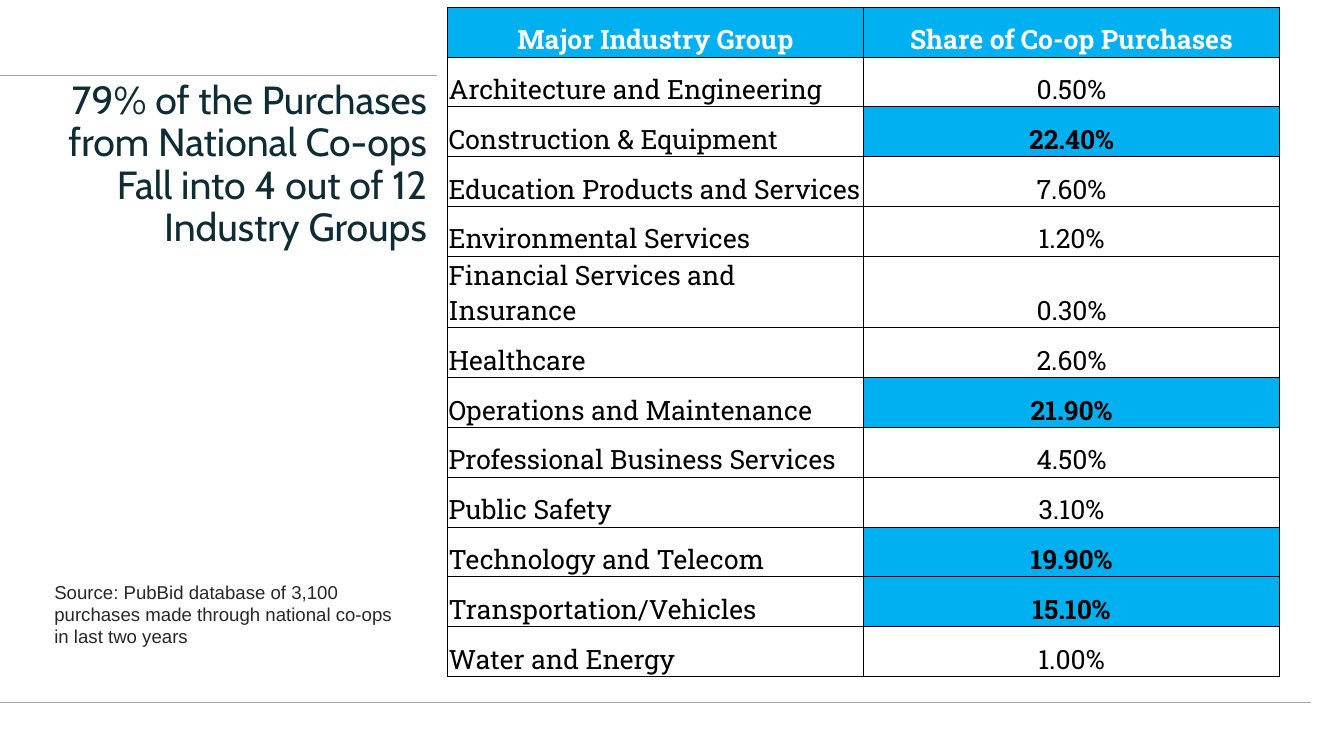
"""Build a slide tabulating national co-op purchases by industry group."""
from lxml import etree
from pptx import Presentation
from pptx import util as u
from pptx.dml.color import RGBColor
from pptx.enum import shapes, text
from pptx.oxml.ns import qn

TITLE = "79% of the Purchases from National Co-ops Fall into 4 out of 12 Industry Groups"
SOURCE = ("Source: PubBid database of 3,100 purchases made through "
          "national co-ops in last two years")
HEADER = ("Major Industry Group", "Share of Co-op Purchases")
SHARES = [
    ("Architecture and Engineering", "0.50%"),
    ("Construction & Equipment", "22.40%"),
    ("Education Products and Services", "7.60%"),
    ("Environmental Services", "1.20%"),
    ("Financial Services and Insurance", "0.30%"),
    ("Healthcare", "2.60%"),
    ("Operations and Maintenance", "21.90%"),
    ("Professional Business Services", "4.50%"),
    ("Public Safety", "3.10%"),
    ("Technology and Telecom", "19.90%"),
    ("Transportation/Vehicles", "15.10%"),
    ("Water and Energy", "1.00%"),
]
LEADERS = {"Construction & Equipment", "Operations and Maintenance",
           "Technology and Telecom", "Transportation/Vehicles"}
TWO_LINE_GROUP = "Financial Services and Insurance"
RULES = [(0.75, 4.33), (6.97, 13)]
TABLE_BOX = (4.44, 0.07, 8.25, 6.64)
TALL_ROW = 0.71

THEME = {
    "title": {"font": "Cabin", "size": 28, "color": "0F2B33"},
    "source": {"font": "Arial", "size": 13.3, "color": "282727"},
    "header": {"font": "Roboto Slab", "size": 19, "color": "FFFFFF", "bold": True},
    "body": {"font": "Roboto Slab", "size": 19, "color": "000000"},
    "accent": "00B0F0",
    "rule": "A6A6A6",
    "border": "000000",
}


def write(frame, words, *, font, size, color, bold=False,
          align=text.PP_ALIGN.LEFT, spacing=1.0):
    frame.word_wrap = True
    paragraph = frame.paragraphs[0]
    paragraph.alignment = align
    paragraph.line_spacing = spacing
    run = paragraph.add_run()
    run.text = words
    run.font.name = font
    run.font.size = u.Pt(size)
    run.font.bold = bold
    run.font.color.rgb = RGBColor.from_string(color)


def add_text(slide, box, words, **style):
    shape = slide.shapes.add_textbox(*map(u.Inches, box))
    write(shape.text_frame, words, **style)


def add_rule(slide, top, end):
    line = slide.shapes.add_connector(
        shapes.MSO_CONNECTOR.STRAIGHT, 0, u.Inches(top), u.Inches(end), u.Inches(top))
    line.line.color.rgb = RGBColor.from_string(THEME["rule"])
    line.line.width = u.Pt(1)
    etree.SubElement(line._element.spPr, qn("a:effectLst"))


def add_borders(cell):
    properties = cell._tc.get_or_add_tcPr()
    for position, side in enumerate(("lnL", "lnR", "lnT", "lnB")):
        border = etree.Element(qn(f"a:{side}"), w=str(u.Pt(0.5)))
        fill = etree.SubElement(border, qn("a:solidFill"))
        etree.SubElement(fill, qn("a:srgbClr"), val=THEME["border"])
        properties.insert(position, border)


def fill_cell(cell, words, highlighted, **style):
    cell.margin_left = cell.margin_right = cell.margin_top = u.Inches(0.01)
    cell.margin_bottom = 0
    cell.vertical_anchor = text.MSO_ANCHOR.BOTTOM
    if highlighted:
        cell.fill.solid()
        cell.fill.fore_color.rgb = RGBColor.from_string(THEME["accent"])
    else:
        cell.fill.background()
    add_borders(cell)
    write(cell.text_frame, words, **style)


def add_share_table(slide):
    rows = [HEADER, *SHARES]
    table = slide.shapes.add_table(len(rows), 2, *map(u.Inches, TABLE_BOX)).table
    table.first_row = table.horz_banding = False
    for column in table.columns:
        column.width = u.Inches(TABLE_BOX[2] / 2)
    row_height = (TABLE_BOX[3] - TALL_ROW) / (len(rows) - 1)
    center, left = text.PP_ALIGN.CENTER, text.PP_ALIGN.LEFT
    for index, (group, share) in enumerate(rows):
        table.rows[index].height = u.Inches(
            TALL_ROW if group == TWO_LINE_GROUP else row_height)
        is_header, leads = index == 0, group in LEADERS
        style = THEME["header" if is_header else "body"]
        fill_cell(table.cell(index, 0), group, is_header,
                  **style, align=center if is_header else left)
        fill_cell(table.cell(index, 1), share, is_header or leads,
                  **{**style, "bold": is_header or leads}, align=center)


def main():
    presentation = Presentation()
    presentation.slide_width = u.Inches(13.33)
    presentation.slide_height = u.Inches(7.5)
    slide = presentation.slides.add_slide(presentation.slide_layouts[6])
    for top, end in RULES:
        add_rule(slide, top, end)
    add_text(slide, (0.44, 0.75, 3.89, 2.33), TITLE, **THEME["title"],
             align=text.PP_ALIGN.RIGHT, spacing=0.9)
    add_share_table(slide)
    add_text(slide, (0.44, 5.71, 3.71, 0.77), SOURCE, **THEME["source"])
    presentation.save("out.pptx")


if __name__ == "__main__":
    main()
